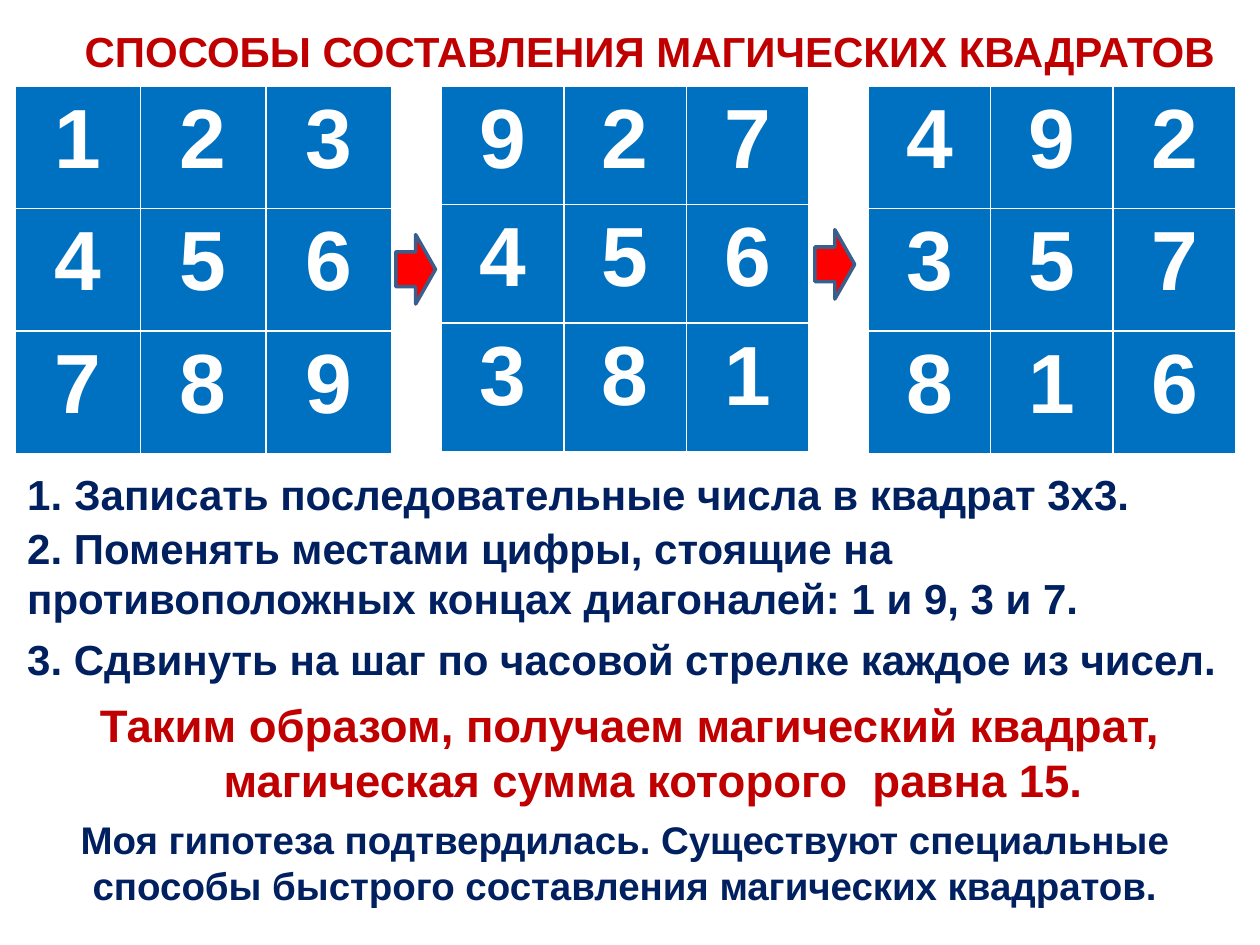
import pptx
import pptx.dml.color
import pptx.enum.shapes
import pptx.enum.text
import pptx.util
from lxml import etree
from pptx.oxml.ns import qn

Cm = pptx.util.Cm
Pt = pptx.util.Pt
RGBColor = pptx.dml.color.RGBColor
LEFT = pptx.enum.text.PP_ALIGN.LEFT
CENTER = pptx.enum.text.PP_ALIGN.CENTER

BLUE = RGBColor(0x00, 0x70, 0xC0)
NAVY = RGBColor(0x00, 0x20, 0x60)
DARK_RED = RGBColor(0xC0, 0x00, 0x00)
RED = RGBColor(0xFF, 0x00, 0x00)
ARROW_LINE = RGBColor(0x3A, 0x5F, 0x8C)
WHITE = RGBColor(0xFF, 0xFF, 0xFF)


def style_paragraph(para, text, size, color, alignment):
    para.text = text
    para.alignment = alignment
    para.font.name = "Arial"
    para.font.size = Pt(size)
    para.font.bold = True
    para.font.color.rgb = color


def add_text(left, top, width, height, text, size, color, alignment):
    box = slide.shapes.add_textbox(Cm(left), Cm(top), Cm(width), Cm(height))
    box.text_frame.word_wrap = True
    para = box.text_frame.paragraphs[0]
    style_paragraph(para, text, size, color, alignment)
    return para


deck = pptx.Presentation()
deck.slide_width = Cm(25.4)
deck.slide_height = Cm(19.05)
slide = deck.slides.add_slide(deck.slide_layouts[6])

# Squares: left edge, column width, row heights, numbers row by row
even_rows = (2.47, 2.47, 2.47)
squares = [
    (0.3, 2.53, even_rows, ("123", "456", "789")),
    (8.9, 2.47, (2.39, 2.39, 2.6), ("927", "456", "381")),
    (17.5, 2.47, even_rows, ("492", "357", "816")),
]
for left, column_width, row_heights, numbers in squares:
    frame = slide.shapes.add_table(
        3, 3, Cm(left), Cm(1.73), Cm(3 * column_width), Cm(sum(row_heights)))
    table = frame.table
    table.horz_banding = False
    for column in table.columns:
        column.width = Cm(column_width)
    for row, height, digits in zip(table.rows, row_heights, numbers):
        row.height = Cm(height)
        for cell, digit in zip(row.cells, digits):
            cell.fill.solid()
            cell.fill.fore_color.rgb = BLUE
            style_paragraph(cell.text_frame.paragraphs[0], digit, 48, WHITE, CENTER)

for left, top in [(7.98, 4.73), (16.43, 4.63)]:
    arrow = slide.shapes.add_shape(
        pptx.enum.shapes.MSO_SHAPE.RIGHT_ARROW, Cm(left), Cm(top), Cm(0.8), Cm(1.4))
    arrow.shadow.inherit = False
    arrow.fill.solid()
    arrow.fill.fore_color.rgb = RED
    arrow.line.color.rgb = ARROW_LINE
    arrow.line.width = Pt(2)

add_text(0.75, 0.38, 24.7, 1.28, "СПОСОБЫ СОСТАВЛЕНИЯ МАГИЧЕСКИХ КВАДРАТОВ",
         24, DARK_RED, CENTER)
first_step = add_text(0.3, 9.32, 24.8, 1.28,
                      "Записать последовательные числа в квадрат 3x3.", 24, NAVY, LEFT)
add_text(0.3, 10.4, 24.8, 2.3,
         "2. Поменять местами цифры, стоящие на противоположных концах "
         "диагоналей: 1 и 9, 3 и 7.", 24, NAVY, LEFT)
add_text(0.3, 12.65, 24.8, 1.28,
         "3. Сдвинуть на шаг по часовой стрелке каждое из чисел.", 24, NAVY, LEFT)
result = add_text(0.4, 13.93, 24.6, 2.5,
                  "Таким образом, получаем магический квадрат, "
                  "магическая сумма которого  равна 15.", 26, DARK_RED, CENTER)
add_text(0.3, 16.33, 24.6, 2.13,
         "Моя гипотеза подтвердилась. Существуют специальные способы "
         "быстрого составления магических квадратов.", 22, NAVY, CENTER)

# Hanging indents, and automatic numbering for the first step
for para in (first_step, result):
    properties = para._p.get_or_add_pPr()
    properties.set("marL", str(Cm(0.95)))
    properties.set("indent", str(-Cm(0.95)))
numbering = etree.Element(qn("a:buAutoNum"), type="arabicPeriod")
first_step._p.get_or_add_pPr().find(qn("a:defRPr")).addprevious(numbering)

deck.save("out.pptx")
